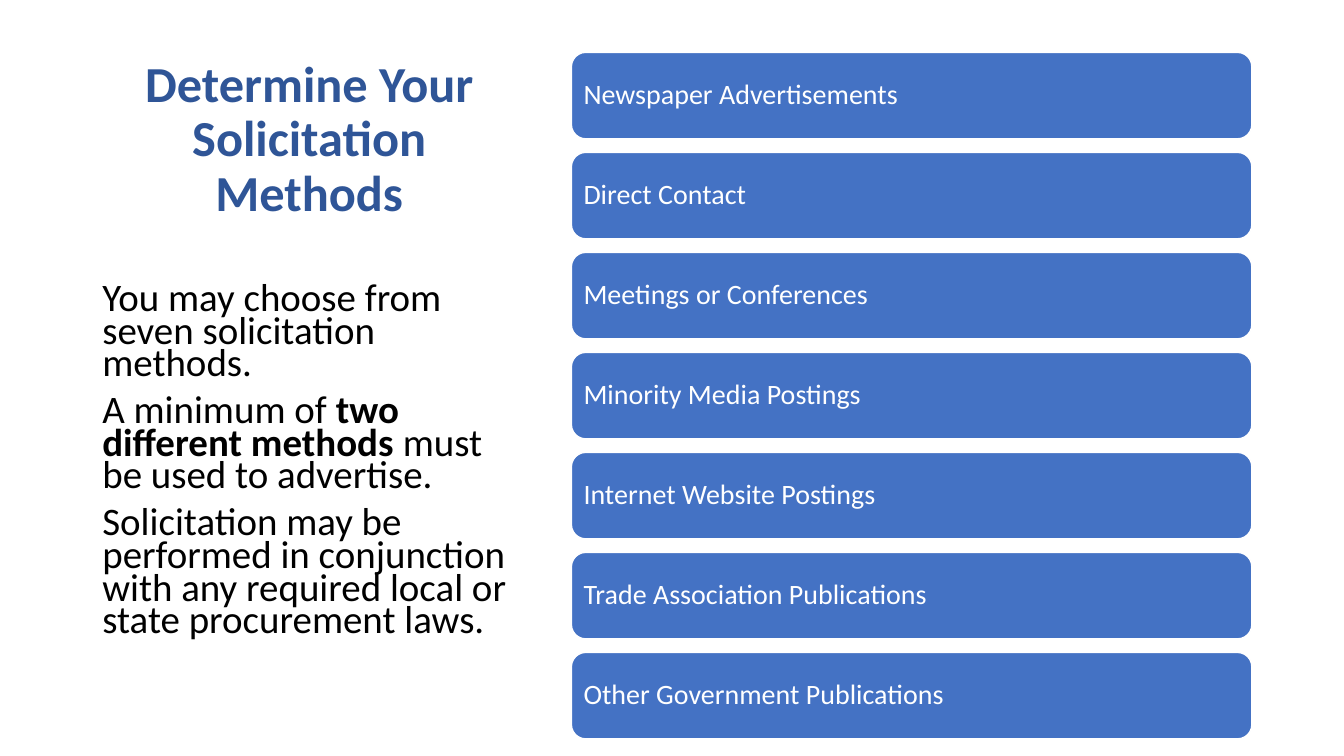
from pptx import Presentation
from pptx.dml.color import RGBColor
from pptx.enum.shapes import MSO_SHAPE
from pptx.enum.text import MSO_ANCHOR, PP_ALIGN
from pptx.util import Cm, Pt

ROUND = MSO_SHAPE.ROUNDED_RECTANGLE
TOP, MIDDLE, BOTTOM = MSO_ANCHOR.TOP, MSO_ANCHOR.MIDDLE, MSO_ANCHOR.BOTTOM
LEFT, CENTER = PP_ALIGN.LEFT, PP_ALIGN.CENTER

TITLE = "Determine Your Solicitation Methods"
METHODS = [
    "Newspaper Advertisements",
    "Direct Contact",
    "Meetings or Conferences",
    "Minority Media Postings",
    "Internet Website Postings",
    "Trade Association Publications",
    "Other Government Publications",
]
# Each paragraph is a list of (text, bold) runs
NOTES = [
    [("You may choose from seven solicitation methods.", False)],
    [("A minimum of ", False), ("two different methods ", True),
     ("must be used to advertise.", False)],
    [("Solicitation may be performed in conjunction with any required "
      "local or state procurement laws.", False)],
]


def color(code):
    return RGBColor.from_string(code)


def apply(target, values):
    for name, value in values.items():
        setattr(target, name, value)


class Deck:
    font = "Calibri"
    blue, navy, white, black = "4472C4", "2F5597", "FFFFFF", "000000"

    def __init__(self):
        self.prs = Presentation()
        apply(self.prs, {"slide_width": Cm(33.87), "slide_height": Cm(19.05)})
        self.slide = self.prs.slides.add_slide(self.prs.slide_layouts[6])

    def fill_text(self, frame, paras, size, ink, fit, form):
        apply(frame, {"word_wrap": True, **fit})
        for i, runs in enumerate(paras):
            para = frame.paragraphs[0] if i == 0 else frame.add_paragraph()
            apply(para, form)
            if i == 0:
                para.space_before = Pt(0)
            for text, bold in runs:
                run = para.add_run()
                run.text = text
                apply(run.font, {"name": self.font, "size": Pt(size), "bold": bold})
                run.font.color.rgb = color(ink)

    def text(self, box, paras, size, ink, fit, form):
        shape = self.slide.shapes.add_textbox(*map(Cm, box))
        self.fill_text(shape.text_frame, paras, size, ink, fit, form)

    def bar(self, box, label):
        shape = self.slide.shapes.add_shape(ROUND, *map(Cm, box))
        shape.shadow.inherit = False
        shape.fill.solid()
        shape.fill.fore_color.rgb = color(self.blue)
        shape.line.color.rgb = color(self.white)
        shape.line.width = Pt(1)
        pad = Cm(0.2)
        fit = {"vertical_anchor": MIDDLE, "margin_left": pad, "margin_right": pad,
               "margin_top": pad, "margin_bottom": pad}
        form = {"alignment": LEFT, "line_spacing": 0.9}
        self.fill_text(shape.text_frame, [[(label, False)]], 20, self.white, fit, form)


def main():
    deck = Deck()

    # Title
    deck.text((2.33, 1.27, 10.93, 4.45), [[(TITLE, True)]], 36, deck.navy,
              {"vertical_anchor": BOTTOM},
              {"alignment": CENTER, "line_spacing": 0.9})

    # Column of methods
    top, step = 1.32, 2.52
    for i, label in enumerate(METHODS):
        deck.bar((14.4, top + i * step, 17.15, 2.18), label)

    # Explanation below the title
    deck.text((2.33, 5.72, 10.93, 10.85), NOTES, 27.8, deck.black,
              {"vertical_anchor": TOP, "margin_top": Cm(1.47)},
              {"alignment": LEFT, "line_spacing": 0.7, "space_before": Pt(10)})

    deck.prs.save("out.pptx")


if __name__ == "__main__":
    main()
